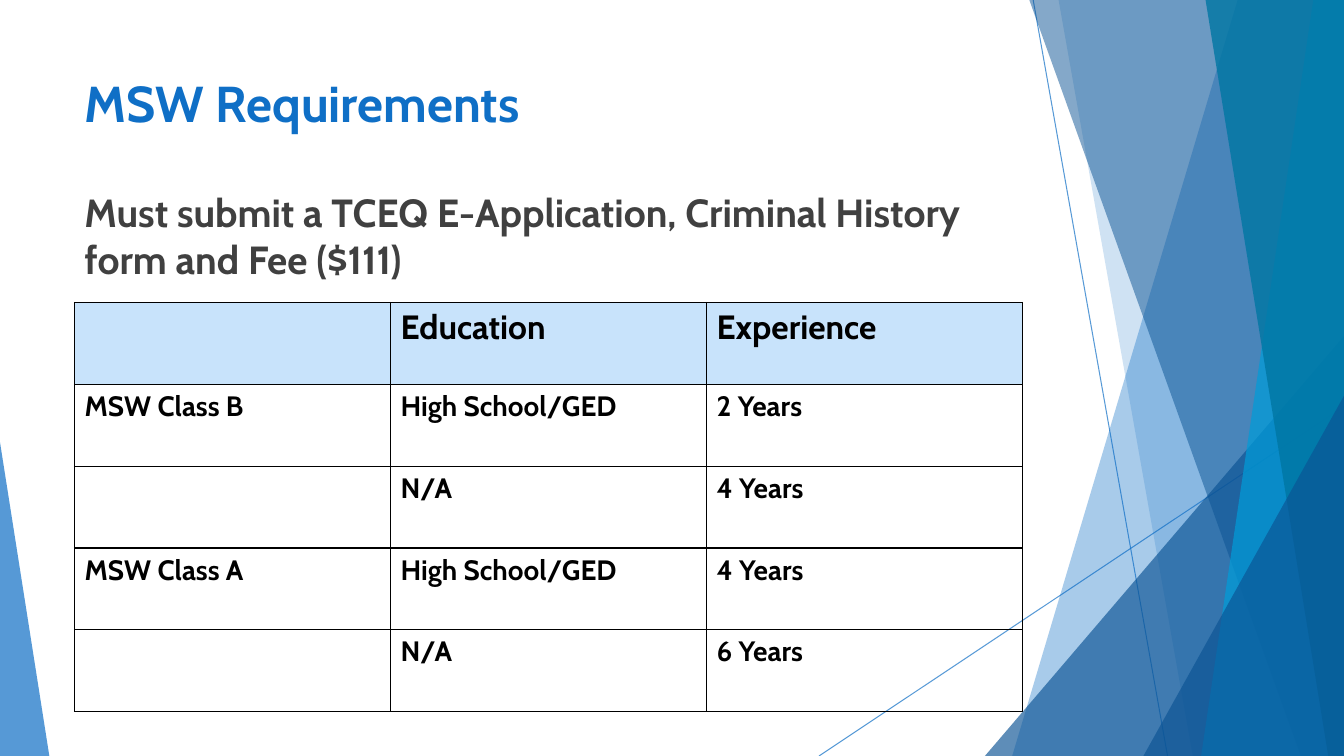
from lxml import etree
from pptx import Presentation
from pptx.dml.color import RGBColor
from pptx.enum.shapes import MSO_CONNECTOR, MSO_SHAPE
from pptx.enum.text import MSO_ANCHOR, MSO_AUTO_SIZE, PP_ALIGN
from pptx.oxml import parse_xml
from pptx.oxml.ns import qn
from pptx.util import Pt

PX = 9525
WIDE, HIGH = 1280, 720
FONT = "Cabin"
BLUE, NAVY, SKY, TEAL = "0F6FC6", "0B5394", "009DD9", "0076A3"
BLACK, GREY, PALE = "000000", "404040", "C8E3FB"
STRAIGHT, TRIANGLE = MSO_CONNECTOR.STRAIGHT, MSO_SHAPE.ISOSCELES_TRIANGLE
TOP, LEFT, FIXED = MSO_ANCHOR.TOP, PP_ALIGN.LEFT, MSO_AUTO_SIZE.NONE
NS = "http://schemas.openxmlformats.org/drawingml/2006/main"


def paint(fill, color, alpha=100):
    fill.solid()
    fill.fore_color.rgb = RGBColor.from_string(color)
    if alpha < 100:
        tone = fill._xPr.find(qn("a:solidFill"))[0]
        etree.SubElement(tone, qn("a:alpha"), val=str(alpha * 1000))


def write(frame, text, size, color):
    frame.word_wrap = True
    frame.vertical_anchor = TOP
    par = frame.paragraphs[0]
    par.alignment = LEFT
    run = par.add_run()
    run.text = text
    for key, value in {"name": FONT, "size": Pt(size), "bold": True}.items():
        setattr(run.font, key, value)
    paint(run.font.fill, color)


deck = Presentation()
deck.slide_width, deck.slide_height = WIDE * PX, HIGH * PX
slide = deck.slides.add_slide(deck.slide_layouts[5])
shapes = slide.shapes

for ends in [(984, 0, 1112, HIGH), (WIDE, 387, 780, HIGH)]:
    line = shapes.add_connector(STRAIGHT, *[n * PX for n in ends])
    line.line.width = Pt(0.75)
    paint(line.line.fill, BLUE, 70)
    etree.SubElement(line._element.spPr, qn("a:effectLst"))

decor = [
    ("band", (1179, 964), BLUE, 36),
    ("band", (1008, 1136), BLUE, 20),
    ("peak", (938, 320, 342, 400, 1), NAVY, 66),
    ("band", (980, 1239), NAVY, 50),
    ("band", (1251, 1144), SKY, 70),
    ("band", (1148, 1265), TEAL, 80),
    ("peak", (1089, 377, 191, 343, 1), NAVY, 66),
    ("peak", (0, 421, 47, 299, 0), BLUE, 70),
]
for kind, place, color, alpha in decor:
    if kind == "band":
        high, low = place
        path = shapes.build_freeform(high, -1, scale=PX)
        path.add_line_segments([(WIDE, -1), (WIDE, HIGH), (low, HIGH)], close=True)
        shape = path.convert_to_shape()
    else:
        *box, tip = place
        shape = shapes.add_shape(TRIANGLE, *[n * PX for n in box])
        shape.adjustments[0] = tip
    shape.shadow.inherit = False
    shape.line.fill.background()
    paint(shape.fill, color, alpha)

title = shapes.title
spot = {"left": 71, "top": 64, "width": 902, "height": 97}
for key, value in spot.items():
    setattr(title, key, value * PX)
title.text_frame.auto_size = FIXED
write(title.text_frame, "MSW Requirements", 36, BLUE)

body = shapes.add_textbox(71 * PX, 175 * PX, 902 * PX, 460 * PX)
write(body.text_frame, "Must submit a TCEQ E-Application, Criminal History form and Fee ($111)", 28, GREY)
body.text_frame.paragraphs[0].space_before = Pt(10)

rows = [
    ("", "Education", "Experience"),
    ("MSW Class B", "High School/GED", "2 Years"),
    ("", "N/A", "4 Years"),
    ("MSW Class A", "High School/GED", "4 Years"),
    ("", "N/A", "6 Years"),
]
table = shapes.add_table(5, 3, 71 * PX, 288 * PX, 903 * PX, 390 * PX).table
table.horz_banding = False
for r, row in enumerate(rows):
    for c, text in enumerate(row):
        cell = table.cell(r, c)
        props = cell._tc.get_or_add_tcPr()
        for side in ("lnL", "lnR", "lnT", "lnB"):
            props.append(parse_xml(
                f'<a:{side} xmlns:a="{NS}" w="12700"><a:solidFill>'
                f'<a:srgbClr val="{BLACK}"/></a:solidFill></a:{side}>'))
        if r == 0:
            paint(cell.fill, PALE)
        else:
            cell.fill.background()
        if text:
            write(cell.text_frame, text, 20 if r else 24, BLACK)

deck.save("out.pptx")
